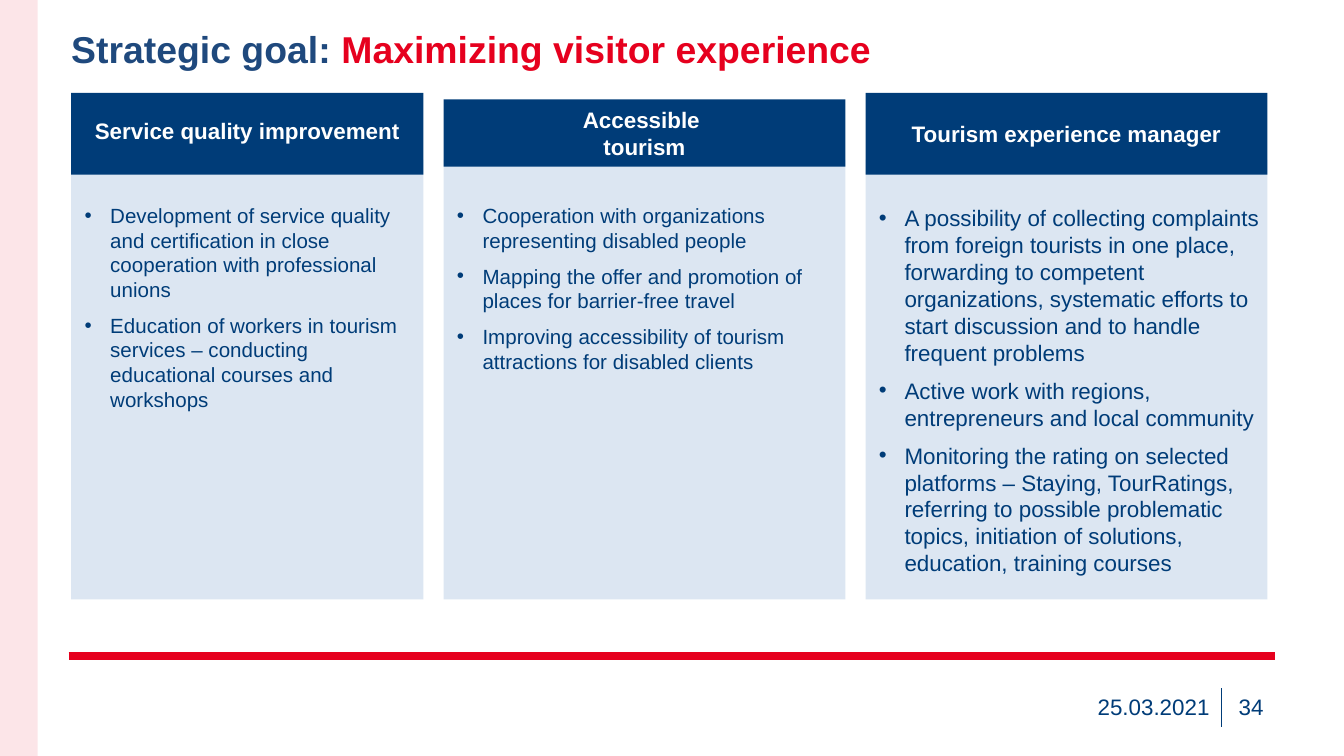
from dataclasses import dataclass

from lxml.etree import SubElement
from pptx import Presentation
from pptx.dml.color import RGBColor
from pptx.enum.shapes import MSO_CONNECTOR, MSO_SHAPE
from pptx.enum.text import MSO_ANCHOR, MSO_AUTO_SIZE, PP_ALIGN
from pptx.oxml.ns import qn
from pptx.util import Inches, Pt

NAVY = "003C78"
TITLE_BLUE = "1F497D"
RED = "E6001E"
PALE_BLUE = "DCE6F2"
PINK = "FCE5E8"
WHITE = "FFFFFF"
SLIDE_WIDTH = 10
SLIDE_HEIGHT = SLIDE_WIDTH * 9 / 16
PANEL_TOP = 1.19
PANEL_HEIGHT = 3.27


@dataclass
class Column:
    placeholder: int
    left: float
    width: float
    header_top: float
    header_height: float
    header_inset: float
    header: str
    list_inset: float
    list_size: int
    items: list[str]


COLUMNS = [
    Column(1, 0.53, 2.62, 0.69, 0.61, 0.18, "Service quality improvement", 0.32, 11, [
        "Development of service quality and certification in close cooperation "
        "with professional unions",
        "Education of workers in tourism services – conducting educational "
        "courses and workshops",
    ]),
    Column(2, 3.3, 2.99, 0.74, 0.5, 0.05, "Accessible \ntourism", 0.32, 11, [
        "Cooperation with organizations representing disabled people",
        "Mapping the offer and promotion of places for barrier-free travel",
        "Improving accessibility of tourism attractions for disabled clients",
    ]),
    Column(4, 6.44, 2.99, 0.69, 0.61, 0.2, "Tourism experience manager", 0.33, 12, [
        "A possibility of collecting complaints from foreign tourists in one place, "
        "forwarding to competent organizations, systematic efforts to start "
        "discussion and to handle frequent problems",
        "Active work with regions, entrepreneurs and local community",
        "Monitoring the rating on selected platforms – Staying, TourRatings, "
        "referring to possible problematic topics, initiation of solutions, "
        "education, training courses",
    ]),
]


def color(value: str) -> RGBColor:
    return RGBColor.from_string(value)


def place(shape, left: float, top: float, width: float, height: float) -> None:
    shape.left, shape.top = Inches(left), Inches(top)
    shape.width, shape.height = Inches(width), Inches(height)


def format_font(font, size: float, value: str, bold: bool = False) -> None:
    font.name = "Arial"
    font.size = Pt(size)
    font.bold = bold
    font.color.rgb = color(value)


def prepare_frame(shape, top_inset: float, anchor=MSO_ANCHOR.TOP):
    frame = shape.text_frame
    frame.word_wrap = True
    frame.auto_size = MSO_AUTO_SIZE.NONE
    frame.vertical_anchor = anchor
    frame.margin_left = frame.margin_right = Inches(0.1)
    frame.margin_top, frame.margin_bottom = Inches(top_inset), Inches(0.05)
    return frame


def add_rectangle(slide, left: float, top: float, width: float, height: float, fill: str):
    shape = slide.shapes.add_shape(
        MSO_SHAPE.RECTANGLE, Inches(left), Inches(top), Inches(width), Inches(height))
    shape.shadow.inherit = False
    shape.fill.solid()
    shape.fill.fore_color.rgb = color(fill)
    shape.line.fill.background()
    return shape


def add_line(slide, left: float, top: float, right: float, bottom: float,
             value: str, width: float) -> None:
    line = slide.shapes.add_connector(
        MSO_CONNECTOR.STRAIGHT, Inches(left), Inches(top), Inches(right), Inches(bottom))
    line.line.color.rgb = color(value)
    line.line.width = Pt(width)
    SubElement(line._element.spPr, qn("a:effectLst"))


def add_bullet(paragraph) -> None:
    properties = paragraph._p.get_or_add_pPr()
    properties.set("marL", str(Inches(0.19)))
    properties.set("indent", str(-Inches(0.19)))
    SubElement(properties, qn("a:buFont")).set("typeface", "Arial")
    SubElement(properties, qn("a:buChar")).set("char", "•")


def add_column(slide, column: Column) -> None:
    panel = slide.placeholders[column.placeholder]
    place(panel, column.left, PANEL_TOP, column.width, PANEL_HEIGHT)
    panel.fill.solid()
    panel.fill.fore_color.rgb = color(PALE_BLUE)
    frame = prepare_frame(panel, column.list_inset)
    frame.margin_right = Inches(0.06)
    frame.text = "\n".join(column.items)
    for paragraph in frame.paragraphs:
        add_bullet(paragraph)
        paragraph.space_before = Pt(0)
        paragraph.space_after = Pt(6)
        format_font(paragraph.runs[0].font, column.list_size, NAVY)

    header = add_rectangle(slide, column.left, column.header_top,
                           column.width, column.header_height, NAVY)
    frame = prepare_frame(header, column.header_inset)
    frame.text = column.header
    for paragraph in frame.paragraphs:
        paragraph.alignment = PP_ALIGN.CENTER
        format_font(paragraph.runs[0].font, 12, WHITE, bold=True)


def add_footer_text(slide, left: float, width: float, text: str) -> None:
    box = slide.shapes.add_textbox(Inches(left), Inches(5.11), Inches(width), Inches(0.3))
    frame = prepare_frame(box, 0.05, MSO_ANCHOR.MIDDLE)
    frame.text = text
    paragraph = frame.paragraphs[0]
    paragraph.alignment = PP_ALIGN.RIGHT
    format_font(paragraph.runs[0].font, 12, NAVY)


def set_title(slide) -> None:
    title = slide.shapes.title
    place(title, 0.53, 0.25, 9.4, 0.26)
    frame = prepare_frame(title, 0)
    frame.margin_left = frame.margin_right = frame.margin_bottom = 0
    paragraph = frame.paragraphs[0]
    paragraph.alignment = PP_ALIGN.LEFT
    paragraph.line_spacing = Pt(20.2)
    for text, value in (("Strategic goal: ", TITLE_BLUE),
                        ("Maximizing visitor experience", RED)):
        run = paragraph.add_run()
        run.text = text
        format_font(run.font, 20, value, bold=True)


def main() -> None:
    presentation = Presentation()
    presentation.slide_width = Inches(SLIDE_WIDTH)
    presentation.slide_height = Inches(SLIDE_HEIGHT)
    slide = presentation.slides.add_slide(presentation.slide_layouts.get_by_name("Comparison"))
    unused = slide.placeholders[3]._element
    unused.getparent().remove(unused)

    add_line(slide, 0.51, 4.88, 9.49, 4.88, RED, 4.5)
    add_line(slide, 9.09, 5.12, 9.09, 5.41, NAVY, 0.75)
    add_footer_text(slide, 6.5, 2.6, "25.03.2021")
    add_footer_text(slide, 9.09, 0.41, "34")
    set_title(slide)
    for column in COLUMNS:
        add_column(slide, column)
    add_rectangle(slide, 0, 0, 0.28, SLIDE_HEIGHT, PINK)
    presentation.save("out.pptx")


if __name__ == "__main__":
    main()
